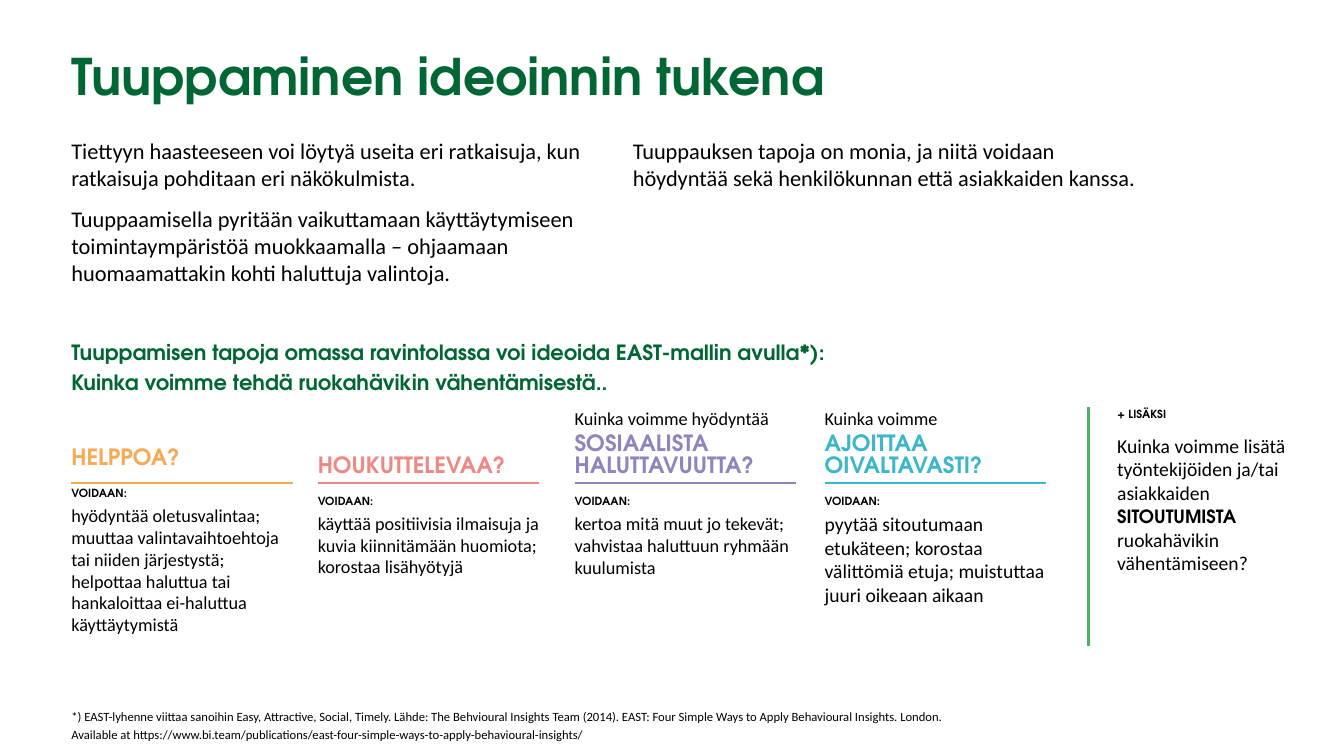
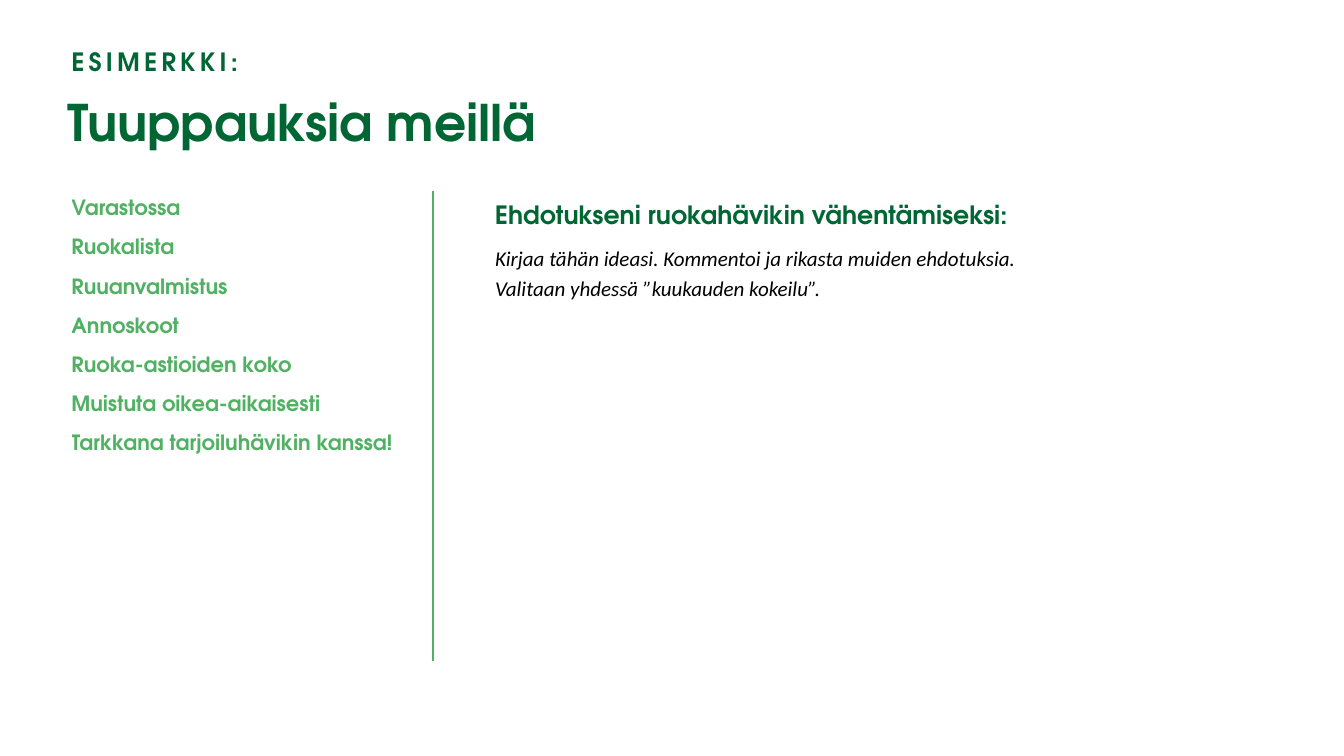
from dataclasses import dataclass

from lxml import etree
from pptx import Presentation
from pptx.dml.color import RGBColor
from pptx.enum import shapes, text
from pptx.oxml import ns
from pptx.util import Pt


@dataclass(frozen=True)
class Theme:
    heading_font: str = "TeX Gyre Adventor"
    body_font: str = "Calibri"
    dark_green: str = "006633"
    green: str = "50B163"
    black: str = "000000"
    orange: str = "F7AA55"
    coral: str = "EF8783"
    violet: str = "9383BD"
    turquoise: str = "3AB7C8"
    title_size: int = 36
    section_size: int = 18
    lead_size: int = 16
    subhead_size: int = 15
    prompt_size: int = 14
    detail_size: int = 13
    note_size: int = 9
    label_size: int = 8
    rule_width: float = 1.5

    def heading(self, size, color):
        return {"name": self.heading_font, "size": Pt(size), "bold": True, "color": color}

    def body(self, size, italic=False):
        return {"name": self.body_font, "size": Pt(size), "bold": False,
                "italic": italic, "color": self.black}


theme = Theme()
TITLE = theme.heading(theme.title_size, theme.dark_green)
SECTION = theme.heading(theme.section_size, theme.dark_green)
SUBHEAD = theme.heading(theme.subhead_size, theme.dark_green)
TOPIC = theme.heading(theme.subhead_size, theme.green)
LABEL = theme.heading(theme.label_size, theme.black)
KEYWORD = theme.heading(theme.detail_size, theme.black)
LEAD = theme.body(theme.lead_size)
PROMPT = theme.body(theme.prompt_size)
DETAIL = theme.body(theme.detail_size)
NOTE = theme.body(theme.note_size)
IDEA = theme.body(theme.subhead_size, italic=True)

LEFT = 51
NO_MARGINS = (0, 0, 0, 0)


def write(shape, box, paragraphs, margins=NO_MARGINS):
    """Place a text shape; each paragraph is (format values, [(text, style), ...])."""
    shape.left, shape.top, shape.width, shape.height = map(Pt, box)
    frame = shape.text_frame
    frame_format = dict(zip(("margin_left", "margin_top", "margin_right", "margin_bottom"),
                            map(Pt, margins)))
    frame_format |= {"word_wrap": True, "auto_size": text.MSO_AUTO_SIZE.NONE,
                     "vertical_anchor": text.MSO_ANCHOR.TOP}
    for name, value in frame_format.items():
        setattr(frame, name, value)
    for index, (values, runs) in enumerate(paragraphs):
        paragraph = frame.add_paragraph() if index else frame.paragraphs[0]
        properties = paragraph._p.get_or_add_pPr()
        properties.set("marL", "0")
        properties.set("indent", "0")
        etree.SubElement(properties, ns.qn("a:buNone"))
        defaults = {"alignment": text.PP_ALIGN.LEFT, "space_before": Pt(0)}
        for name, value in (defaults | values).items():
            setattr(paragraph, name, value)
        for words, style in runs:
            if words == "\n":
                paragraph.add_line_break()
                continue
            run = paragraph.add_run()
            run.text = words
            for name, value in style.items():
                if name == "color":
                    run.font.color.rgb = RGBColor.from_string(value)
                else:
                    setattr(run.font, name, value)
    return shape


def add_rule(slide, start, end, color):
    line = slide.shapes.add_connector(shapes.MSO_CONNECTOR.STRAIGHT, *map(Pt, start + end))
    line.line.color.rgb = RGBColor.from_string(color)
    line.line.width = Pt(theme.rule_width)
    etree.SubElement(line._element.spPr, ns.qn("a:effectLst"))


presentation = Presentation()
presentation.slide_width, presentation.slide_height = Pt(960), Pt(540)
empty_box = map(Pt, NO_MARGINS)
empty_box = tuple(empty_box)

# Slide 1: title and introduction
slide = presentation.slides.add_slide(presentation.slide_layouts[3])
write(slide.shapes.title, (LEFT, 37, 747, 96),
      [({"line_spacing": 0.9}, [("Tuuppaminen ideoinnin tukena", TITLE)])])
write(slide.placeholders[1], (LEFT, 98, 381, 113), [
    ({}, [("Tiettyyn haasteeseen voi löytyä useita eri ratkaisuja, kun ratkaisuja "
           "pohditaan eri näkökulmista.", LEAD)]),
    ({"space_before": Pt(10)},
     [("Tuuppaamisella pyritään vaikuttamaan käyttäytymiseen toimintaympäristöä "
       "muokkaamalla – ohjaamaan huomaamattakin kohti haluttuja valintoja.", LEAD)]),
])
write(slide.placeholders[2], (452, 98, 359, 113), [
    ({}, [("Tuuppauksen tapoja on monia, ja niitä voidaan höydyntää sekä henkilökunnan "
           "että asiakkaiden kanssa.", LEAD)]),
])

# Subheading and source note
write(slide.shapes.add_textbox(*empty_box), (LEFT, 239, 572, 42), [
    ({"line_spacing": 1.2},
     [("Tuuppamisen tapoja omassa ravintolassa voi ideoida EAST-mallin avulla*): "
       "Kuinka voimme tehdä ruokahävikin vähentämisestä..", SUBHEAD)]),
])
write(slide.shapes.add_textbox(*empty_box), (LEFT, 504, 631, 25), [
    ({"line_spacing": 1.2},
     [("*) EAST-lyhenne viittaa sanoihin Easy, Attractive, Social, Timely. Lähde: The "
       "Behvioural Insights Team (2014). EAST: Four Simple Ways to Apply Behavioural "
       "Insights. London. Available at https://www.bi.team/publications/"
       "east-four-simple-ways-to-apply-behavioural-insights/", NOTE)]),
])

# EAST columns: left, top, colour, lead-in, heading lines, detail, detail style
COLUMN_TOP, COLUMN_WIDTH, RULE_Y = 291, 160, 345
columns = [
    (LEFT, 316.4, theme.orange, "", ["HELPPOA?"],
     "hyödyntää oletusvalintaa; muuttaa valintavaihtoehtoja tai niiden järjestystä; "
     "helpottaa haluttua tai hankaloittaa ei-haluttua käyttäytymistä", DETAIL),
    (227, 322, theme.coral, "", ["HOUKUTTELEVAA?"],
     "käyttää positiivisia ilmaisuja ja kuvia kiinnitämään huomiota; "
     "korostaa lisähyötyjä", DETAIL),
    (410.5, COLUMN_TOP, theme.violet, "Kuinka voimme hyödyntää",
     ["SOSIAALISTA", "HALUTTAVUUTTA?"],
     "kertoa mitä muut jo tekevät; vahvistaa haluttuun ryhmään kuulumista", DETAIL),
    (589, COLUMN_TOP, theme.turquoise, "Kuinka voimme",
     ["AJOITTAA", "OIVALTAVASTI?"],
     "pyytää sitoutumaan etukäteen; korostaa välittömiä etuja; muistuttaa juuri "
     "oikeaan aikaan", PROMPT),
]
for left, top, color, lead_in, heading_lines, detail, detail_style in columns:
    heading_style = theme.heading(theme.lead_size, color)
    first_runs = [(lead_in, DETAIL), ("\n", None)] if lead_in else []
    paragraphs = [({}, first_runs + [(heading_lines[0], heading_style)])]
    paragraphs += [({"line_spacing": Pt(15.5)}, [(line, heading_style)])
                   for line in heading_lines[1:]]
    paragraphs += [({"space_before": Pt(12)}, [("VOIDAAN:", LABEL)]),
                   ({"space_before": Pt(3)}, [(detail, detail_style)])]
    write(slide.shapes.add_textbox(*empty_box),
          (left, top, COLUMN_WIDTH, 455 - top), paragraphs)
    add_rule(slide, (left, RULE_Y), (left + 158, RULE_Y), color)

# Side column
add_rule(slide, (777.5, COLUMN_TOP), (777.5, 461.5), theme.green)
write(slide.shapes.add_textbox(*empty_box), (798, COLUMN_TOP, 138, 140), [
    ({}, [("+ LISÄKSI", LABEL)]),
    ({"space_before": Pt(9)},
     [("Kuinka voimme lisätä työntekijöiden ja/tai asiakkaiden ", PROMPT),
      ("SITOUTUMISTA", KEYWORD),
      (" ruokahävikin vähentämiseen?", PROMPT)]),
])

# Slide 2: title with kicker
slide = presentation.slides.add_slide(presentation.slide_layouts[5])
write(slide.shapes.title, (48, 65, 747, 60), [({}, [("Tuuppauksia meillä", TITLE)])])
kicker = write(slide.shapes.add_textbox(*empty_box), (LEFT, 33, 590, 22),
               [({}, [("ESIMERKKI:", SECTION)])])
kicker.text_frame.paragraphs[0].runs[0].font._element.set("spc", "300")

# Topic table
topics = ["Varastossa", "Ruokalista", "Ruuanvalmistus", "Annoskoot", "Ruoka-astioiden koko",
          "Muistuta oikea-aikaisesti", "Tarkkana tarjoiluhävikin kanssa!"]
ROW_HEIGHT = 28
table = slide.shapes.add_table(len(topics), 1, Pt(LEFT), Pt(139.5), Pt(256),
                               Pt(ROW_HEIGHT * len(topics))).table
table.first_row = table.horz_banding = False
cell_format = {"margin_left": 0, "margin_right": 0,
               "margin_top": Pt(3.6), "margin_bottom": Pt(6.4)}
for row, topic in enumerate(topics):
    cell = table.cell(row, 0)
    cell.fill.background()
    for name, value in cell_format.items():
        setattr(cell, name, value)
    cell.text = topic
    font = cell.text_frame.paragraphs[0].runs[0].font
    font.color.rgb = RGBColor.from_string(TOPIC["color"])
    for name in ("name", "size", "bold"):
        setattr(font, name, TOPIC[name])

# Divider and suggestion area
add_rule(slide, (309.5, 136.5), (309.5, 472.5), theme.green)
SUGGESTION_MARGINS = (7.2, 3.6, 7.2, 3.6)
write(slide.shapes.add_textbox(*empty_box), (346.5, 134.5, 509, 31),
      [({"line_spacing": 1.2}, [("Ehdotukseni ruokahävikin vähentämiseksi:", SECTION)])],
      SUGGESTION_MARGINS)
write(slide.shapes.add_textbox(*empty_box), (346.5, 168, 420, 50),
      [({"line_spacing": 1.2}, [(line, IDEA)]) for line in (
          "Kirjaa tähän ideasi. Kommentoi ja rikasta muiden ehdotuksia.",
          "Valitaan yhdessä ”kuukauden kokeilu”.")],
      SUGGESTION_MARGINS)

presentation.save("out.pptx")
